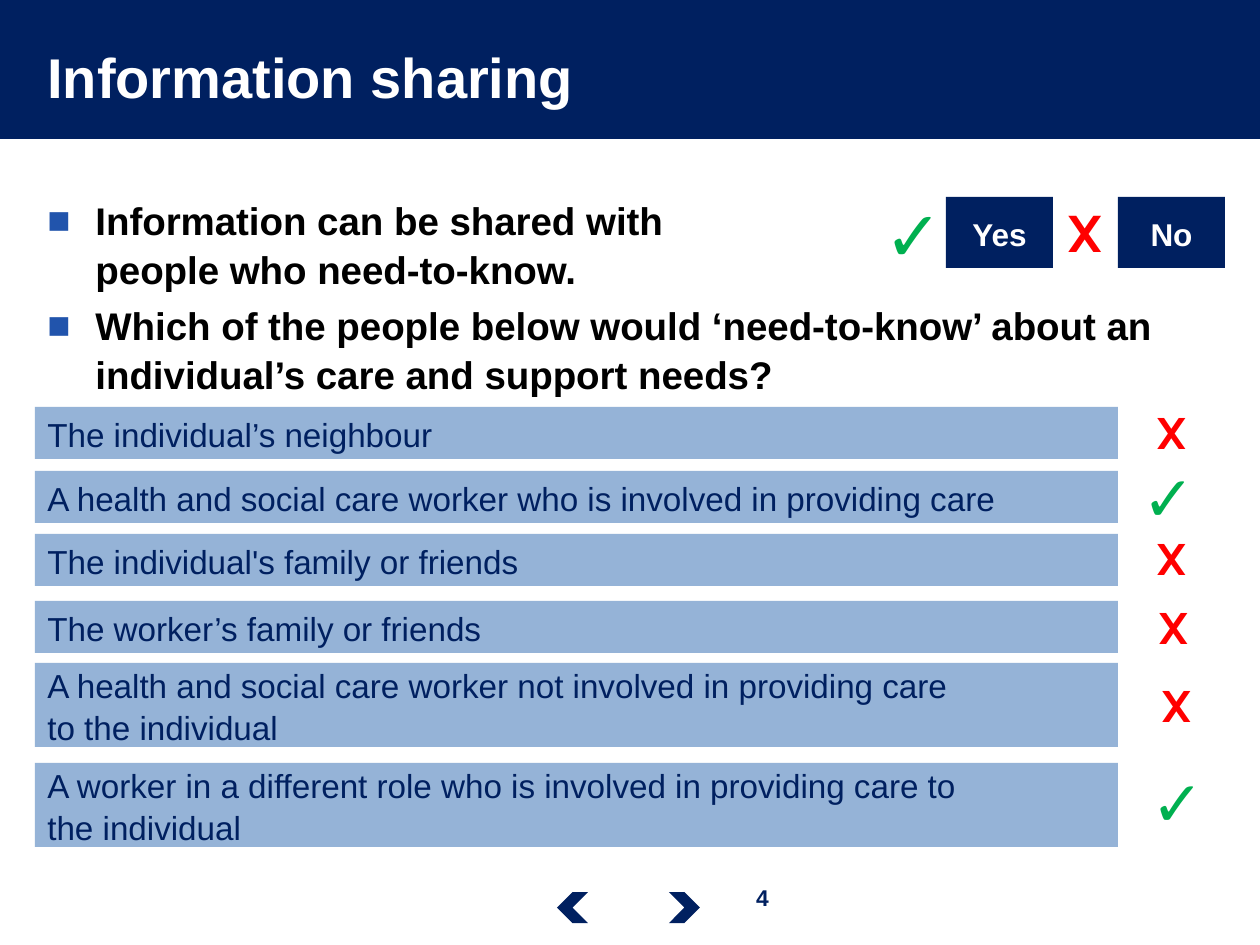
"""Build the information sharing quiz slide."""
from dataclasses import dataclass

from lxml import etree
from pptx import Presentation
from pptx.dml.color import RGBColor
from pptx.enum.shapes import MSO_SHAPE
from pptx.enum.text import MSO_ANCHOR, PP_ALIGN
from pptx.oxml.ns import qn
from pptx.util import Emu, Pt

RECT, CHEVRON = MSO_SHAPE.RECTANGLE, MSO_SHAPE.CHEVRON
LEFT, CENTER = PP_ALIGN.LEFT, PP_ALIGN.CENTER
TOP, MIDDLE = MSO_ANCHOR.TOP, MSO_ANCHOR.MIDDLE


@dataclass(frozen=True)
class Theme:
    """Colours, fonts and type sizes in points."""
    navy: str = "002060"
    row: str = "95B3D7"
    bullet: str = "2154AC"
    white: str = "FFFFFF"
    black: str = "000000"
    green: str = "00B050"
    red: str = "FF0000"
    font: str = "Arial"
    cross_font: str = "TeX Gyre Adventor"
    title: int = 32
    body: int = 22
    answer: int = 19
    button: int = 18
    number: int = 13
    tick: int = 36
    cross: int = 24
    key_tick: int = 40
    key_cross: int = 28
    leading: float = 1.05
    gap: float = 4.4


def px(value):
    """Turn pixels into EMU."""
    return Emu(round(value * 914400 / 126))


class SlideBuilder:
    """Draw styled elements on the current slide."""

    def __init__(self, deck, theme):
        """Add a blank page to the deck."""
        self.theme = theme
        self.page = deck.slides.add_slide(deck.slide_layouts[6])

    def add_text(self, para, text, size, color, bold=False, font=None):
        """Add the lines of a text as runs."""
        for index, line in enumerate(text.split("\n")):
            if index:
                para.add_line_break()
            span = para.add_run()
            span.text = line
            span.font.size = Pt(size)
            span.font.bold = bold
            span.font.name = font or self.theme.font
            span.font.color.rgb = RGBColor.from_string(color)

    def shape(self, kind, area, fill, rotation=0):
        """Add a flat filled shape."""
        box = self.page.shapes.add_shape(kind, *map(px, area))
        box.shadow.inherit = False
        box.fill.solid()
        box.fill.fore_color.rgb = RGBColor.from_string(fill)
        box.line.fill.background()
        box.rotation = rotation
        return box

    def panel(self, area, fill, text, size, color, bold=False, align=LEFT):
        """Add a rectangle with a label."""
        frame = self.shape(RECT, area, fill).text_frame
        frame.word_wrap = True
        frame.vertical_anchor = MIDDLE
        para = frame.paragraphs[0]
        para.alignment = align
        para.line_spacing = self.theme.leading
        self.add_text(para, text, size, color, bold)

    def label(self, area, text, size, color, align=LEFT, anchor=TOP, font=None, wrap=True):
        """Add a bold text box."""
        frame = self.page.shapes.add_textbox(*map(px, area)).text_frame
        frame.word_wrap = wrap
        frame.vertical_anchor = anchor
        para = frame.paragraphs[0]
        para.alignment = align
        self.add_text(para, text, size, color, True, font)

    def tick(self, left, top, size):
        """Add a green tick."""
        self.label((left, top, 74, 90), "✓", size, self.theme.green, CENTER)

    def cross(self, left, top, size):
        """Add a red cross."""
        self.label((left, top, 52, 63), "X", size, self.theme.red, CENTER,
                   font=self.theme.cross_font, wrap=False)

    def bullets(self, area, items):
        """Add a bulleted list."""
        frame = self.page.shapes.add_textbox(*map(px, area)).text_frame
        frame.word_wrap = True
        for index, item in enumerate(items):
            para = frame.add_paragraph() if index else frame.paragraphs[0]
            para.line_spacing = self.theme.leading
            if index:
                para.space_before = Pt(self.theme.gap)
            props = para._p.get_or_add_pPr()
            props.set("marL", str(px(48)))
            props.set("indent", str(px(-48)))
            color = etree.SubElement(props, qn("a:buClr"))
            etree.SubElement(color, qn("a:srgbClr"), val=self.theme.bullet)
            etree.SubElement(props, qn("a:buFont"), typeface=self.theme.font)
            etree.SubElement(props, qn("a:buChar"), char="■")
            self.add_text(para, item, self.theme.body, self.theme.black, True)


def main():
    """Compose and save the slide."""
    theme = Theme()
    deck = Presentation()
    deck.slide_width, deck.slide_height = px(1260), px(945)
    slide = SlideBuilder(deck, theme)

    slide.shape(RECT, (0, 0, 1260, 139), theme.navy)
    slide.label((35, 13, 995, 127), "Information sharing", theme.title, theme.white, anchor=MIDDLE)
    slide.bullets((35, 189, 1192, 200), [
        "Information can be shared with\npeople who need-to-know.",
        "Which of the people below would ‘need-to-know’ about an individual’s care and support needs?",
    ])

    for left, text in ((946, "Yes"), (1118, "No")):
        slide.panel((left, 197, 107, 71), theme.navy, text, theme.button, theme.white, True, CENTER)
    slide.tick(872, 185, theme.key_tick)
    slide.cross(1056, 197, theme.key_cross)

    answers = (
        (407, 52, "The individual’s neighbour", slide.cross, 1145, 401),
        (471, 52, "A health and social care worker who is involved in providing care",
         slide.tick, 1130, 452),
        (534, 52, "The individual's family or friends", slide.cross, 1145, 527),
        (601, 52, "The worker’s family or friends", slide.cross, 1147, 596),
        (663, 84, "A health and social care worker not involved in providing care\nto the individual",
         slide.cross, 1150, 674),
        (763, 84, "A worker in a different role who is involved in providing care to\nthe individual",
         slide.tick, 1139, 757),
    )
    sizes = {slide.cross: theme.cross, slide.tick: theme.tick}
    for top, height, text, mark, mark_left, mark_top in answers:
        slide.panel((35, top, 1083, height), theme.row, text, theme.answer, theme.navy)
        mark(mark_left, mark_top, sizes[mark])

    for left, rotation in ((557, 180), (669, 0)):
        slide.shape(CHEVRON, (left, 892, 31, 31), theme.navy, rotation)
    slide.label((718, 878, 89, 40), "4", theme.number, theme.navy, CENTER)
    deck.save("out.pptx")


if __name__ == "__main__":
    main()
